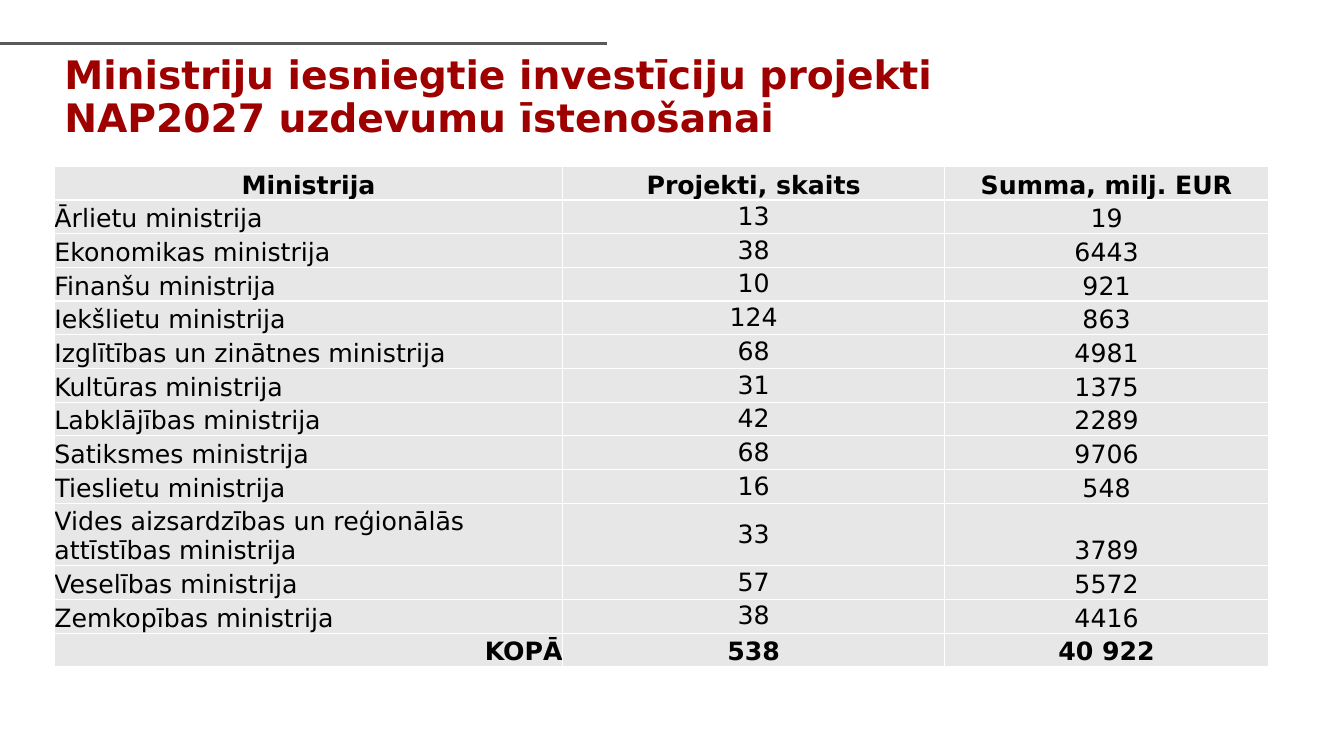
from lxml.etree import SubElement
from pptx import Presentation
from pptx.dml.color import RGBColor
from pptx.enum.shapes import MSO_CONNECTOR
from pptx.enum.text import MSO_ANCHOR, PP_ALIGN
from pptx.oxml.ns import qn
from pptx.util import Inches, Pt

FONT = "DejaVu Sans"
RED = RGBColor(0x9E, 0x00, 0x00)
BLACK = RGBColor(0x00, 0x00, 0x00)
WHITE = RGBColor(0xFF, 0xFF, 0xFF)
LIGHT_GREY = RGBColor(0xE7, 0xE7, 0xE7)
DARK_GREY = RGBColor(0x59, 0x59, 0x59)

LEFT, CONTENT_WIDTH = 0.54, 12.04
TABLE_TOP, TABLE_HEIGHT = 1.65, 4.97
TALL_ROW, TALL_HEIGHT = 10, 0.62
COLUMN_WIDTHS = (5.04, 3.79, 3.21)

ROWS = [
    ("Ministrija", "Projekti, skaits", "Summa, milj. EUR"),
    ("Ārlietu ministrija", "13", "19"),
    ("Ekonomikas ministrija", "38", "6443"),
    ("Finanšu ministrija", "10", "921"),
    ("Iekšlietu ministrija", "124", "863"),
    ("Izglītības un zinātnes ministrija", "68", "4981"),
    ("Kultūras ministrija", "31", "1375"),
    ("Labklājības ministrija", "42", "2289"),
    ("Satiksmes ministrija", "68", "9706"),
    ("Tieslietu ministrija", "16", "548"),
    ("Vides aizsardzības un reģionālās attīstības ministrija", "33", "3789"),
    ("Veselības ministrija", "57", "5572"),
    ("Zemkopības ministrija", "38", "4416"),
    ("KOPĀ", "538", "40 922"),
]
LAST_ROW = len(ROWS) - 1


def style_runs(para, size, color, bold):
    for span in para.runs:
        span.font.name = FONT
        span.font.size = Pt(size)
        span.font.bold = bold
        span.font.color.rgb = color


def add_cell_borders(cell, color, width):
    """Draw all four sides; call before the fill, which must follow in the XML."""
    properties = cell._tc.get_or_add_tcPr()
    for side in ("a:lnL", "a:lnR", "a:lnT", "a:lnB"):
        line = SubElement(properties, qn(side), w=str(Pt(width)))
        SubElement(SubElement(line, qn("a:solidFill")), qn("a:srgbClr"), val=str(color))


deck = Presentation()
deck.slide_width = Inches(13.33)
deck.slide_height = Inches(7.5)
page = deck.slides.add_slide(deck.slide_layouts[6])

# Title
title = page.shapes.add_textbox(
    Inches(LEFT), Inches(0.47), Inches(CONTENT_WIDTH), Inches(1.01))
title.text_frame.word_wrap = True
title.text_frame.vertical_anchor = MSO_ANCHOR.MIDDLE
title.text_frame.text = (
    "Ministriju iesniegtie investīciju projekti\vNAP2027 uzdevumu īstenošanai")
heading = title.text_frame.paragraphs[0]
heading.line_spacing = 0.9
style_runs(heading, 28, RED, True)

# Ministry table
table = page.shapes.add_table(
    len(ROWS), len(COLUMN_WIDTHS), Inches(LEFT), Inches(TABLE_TOP),
    Inches(CONTENT_WIDTH), Inches(TABLE_HEIGHT)).table
table.horz_banding = False
for column, width in zip(table.columns, COLUMN_WIDTHS):
    column.width = Inches(width)

row_height = (TABLE_HEIGHT - TALL_HEIGHT) / LAST_ROW
for row_index, values in enumerate(ROWS):
    table.rows[row_index].height = Inches(
        TALL_HEIGHT if row_index == TALL_ROW else row_height)
    emphasized = row_index in (0, LAST_ROW)
    for column_index, value in enumerate(values):
        cell = table.cell(row_index, column_index)
        cell.margin_left = cell.margin_right = cell.margin_top = cell.margin_bottom = 0
        middle = column_index == 1 and not emphasized
        cell.vertical_anchor = MSO_ANCHOR.MIDDLE if middle else MSO_ANCHOR.BOTTOM
        add_cell_borders(cell, WHITE, 1)
        cell.fill.solid()
        cell.fill.fore_color.rgb = LIGHT_GREY
        cell.text_frame.text = value
        para = cell.text_frame.paragraphs[0]
        if column_index > 0 or row_index == 0:
            para.alignment = PP_ALIGN.CENTER
        else:
            para.alignment = PP_ALIGN.RIGHT if row_index == LAST_ROW else PP_ALIGN.LEFT
        style_runs(para, 18, BLACK, emphasized)

# Rule above the title
rule = page.shapes.add_connector(
    MSO_CONNECTOR.STRAIGHT, 0, Inches(0.43), Inches(6.02), Inches(0.43))
rule.line.color.rgb = DARK_GREY
rule.line.width = Pt(2.5)
SubElement(rule._element.spPr, qn("a:effectLst"))

deck.save("out.pptx")
